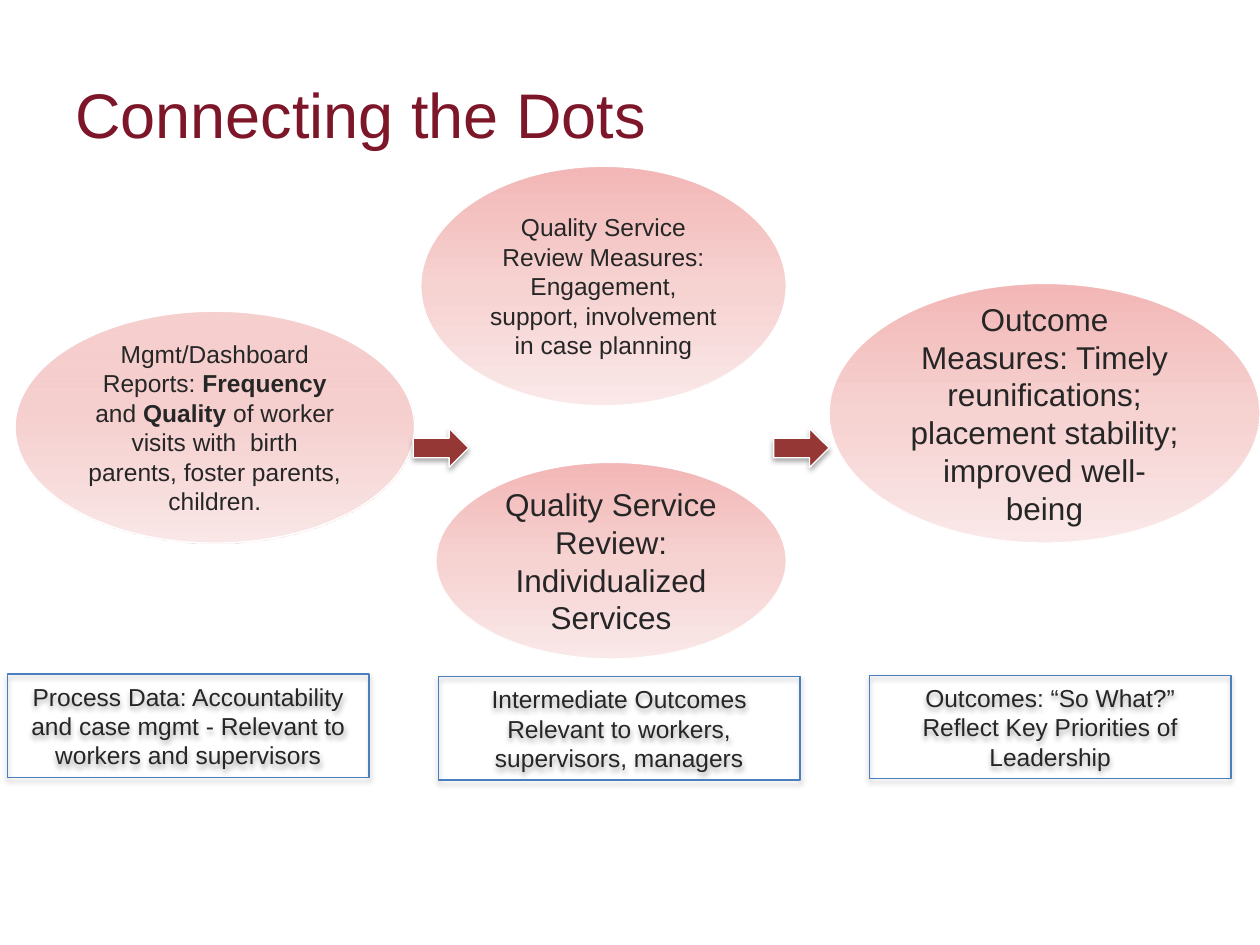
from lxml import etree
from pptx import Presentation, util as u
from pptx.dml.color import RGBColor
from pptx.enum import shapes, text
from pptx.oxml import ns

COLORS = {
    "title": "7D1628",
    "body": "262626",
    "arrow": "953735",
    "outline": "FFFFFF",
    "box line": "4B7EBC",
    "shadow": "000000",
}
PINK_STOPS = [(0, "F2B7B6"), (50, "F6D2D1"), (100, "FAE8E8")]


def add_element(parent, tag, **attributes):
    values = {name: str(value) for name, value in attributes.items()}
    return etree.SubElement(parent, ns.qn(tag), values)


class SlideBuilder:
    font_name = "Arial"

    def __init__(self, page):
        self.page = page

    def color(self, name):
        return RGBColor.from_string(COLORS[name])

    def style(self, paragraph, size, color):
        paragraph.font.name = self.font_name
        paragraph.font.size = u.Pt(size)
        paragraph.font.color.rgb = self.color(color)

    def title(self, words, left, top, width, height):
        box = self.page.shapes.add_textbox(*map(u.Inches, (left, top, width, height)))
        frame = box.text_frame
        frame.word_wrap = True
        frame.margin_top = u.Inches(0.09)
        frame.text = words
        self.style(frame.paragraphs[0], 36, "title")

    def shape(self, kind, place, line):
        shape = self.page.shapes.add_shape(kind, *map(u.Inches, place))
        shape.shadow.inherit = False
        shape.line.color.rgb = self.color(line)
        shape.line.width = u.Pt(0.75)
        return shape

    def label(self, shape, paragraphs, size):
        """Each paragraph is a list of (words, bold) spans."""
        frame = shape.text_frame
        frame.word_wrap = True
        frame.vertical_anchor = text.MSO_ANCHOR.MIDDLE
        for index, spans in enumerate(paragraphs):
            para = frame.add_paragraph() if index else frame.paragraphs[0]
            para.alignment = text.PP_ALIGN.CENTER
            self.style(para, size, "body")
            for words, bold in spans:
                span = para.add_run()
                span.text = words
                if bold:
                    span.font.bold = True

    def drop_shadow(self, shape):
        effects = shape._element.spPr.find(ns.qn("a:effectLst"))
        shadow = add_element(effects, "a:outerShdw", blurRad=u.Pt(3.1), dist=u.Pt(1.8),
                             dir=90 * 60000, rotWithShape=0)
        color = add_element(shadow, "a:srgbClr", val=COLORS["shadow"])
        add_element(color, "a:alpha", val=35000)

    def pink_fill(self, shape, first_alpha):
        shape.fill.gradient()
        gradient = shape._element.spPr.find(ns.qn("a:gradFill"))
        for child in list(gradient):
            gradient.remove(child)
        stops = add_element(gradient, "a:gsLst")
        for position, value in PINK_STOPS:
            stop = add_element(stops, "a:gs", pos=position * 1000)
            color = add_element(stop, "a:srgbClr", val=value)
            if position == 0 and first_alpha < 100:
                add_element(color, "a:alpha", val=first_alpha * 1000)
        add_element(gradient, "a:lin", ang=90 * 60000, scaled=0)

    def ellipse(self, place, spans, size, first_alpha=100):
        shape = self.shape(shapes.MSO_SHAPE.OVAL, place, "outline")
        self.pink_fill(shape, first_alpha)
        self.label(shape, [spans], size)

    def arrow(self, left):
        shape = self.shape(shapes.MSO_SHAPE.RIGHT_ARROW, (left, 3.4, 0.44, 0.31), "outline")
        shape.fill.solid()
        shape.fill.fore_color.rgb = self.color("arrow")
        self.drop_shadow(shape)

    def caption(self, left, top, lines):
        shape = self.shape(shapes.MSO_SHAPE.RECTANGLE, (left, top, 2.87, 0.82), "box line")
        shape.fill.background()
        self.drop_shadow(shape)
        self.label(shape, [[(line, False)] for line in lines], 14)


def main():
    deck = Presentation()
    deck.slide_width, deck.slide_height = u.Inches(10), u.Inches(7.5)
    builder = SlideBuilder(deck.slides.add_slide(deck.slide_layouts[6]))

    builder.title("Connecting the Dots", 0.5, 0.51, 9, 0.91)

    # Measures, from process to outcome
    builder.ellipse((0.12, 2.47, 3.17, 1.84), [
        ("Mgmt/Dashboard Reports: ", False),
        ("Frequency ", True),
        ("and", False),
        (" Quality ", True),
        ("of worker visits with  birth parents, foster parents, children.", False),
    ], 14, first_alpha=65)
    for place, words, size in [
        ((3.34, 1.32, 2.9, 1.9),
         "Quality Service Review Measures: Engagement, support, involvement in case planning", 14),
        ((3.46, 3.67, 2.78, 1.56),
         "Quality Service Review: Individualized Services", 18),
        ((6.58, 2.25, 3.42, 2.06),
         "Outcome Measures: Timely reunifications; placement stability; improved well-being", 18),
    ]:
        builder.ellipse(place, [(words, False)], size)

    # Arrows between the stages
    for left in (3.28, 6.14):
        builder.arrow(left)

    # Captions, evenly spaced under the stages
    captions = [
        (5.35, ["Process Data: Accountability and case mgmt - Relevant to workers and supervisors"]),
        (5.37, ["Intermediate Outcomes", "Relevant to workers, supervisors, managers"]),
        (5.36, ["Outcomes: “So What?”", "Reflect Key Priorities of Leadership"]),
    ]
    for column, (top, lines) in enumerate(captions):
        builder.caption(0.06 + 3.42 * column, top, lines)

    deck.save("out.pptx")


if __name__ == "__main__":
    main()
